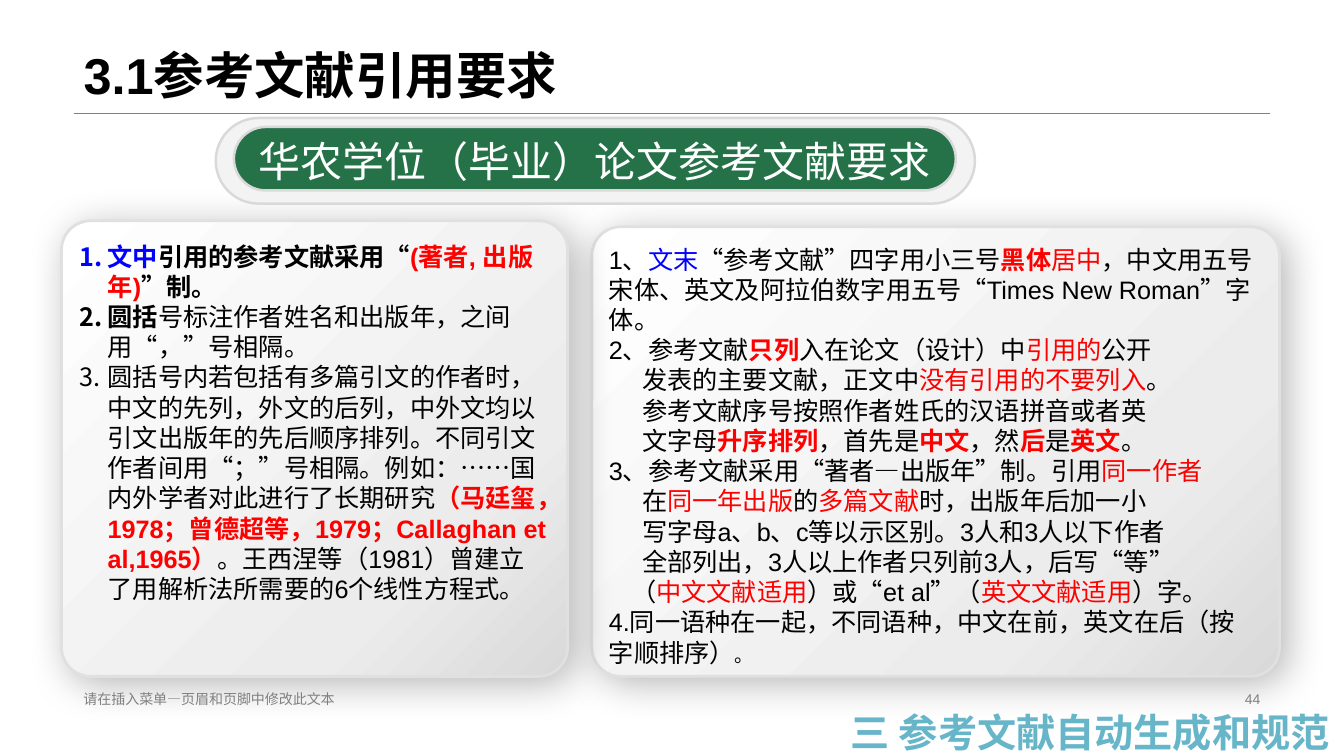
"""Build the slide on citation requirements for theses."""
from copy import deepcopy

from lxml import etree
from pptx import Presentation
from pptx import util as u
from pptx.dml.color import RGBColor
from pptx.enum import shapes, text
from pptx.oxml import parse_xml
from pptx.oxml.ns import nsdecls, qn

PX = 9144
BLACK = RGBColor(0x00, 0x00, 0x00)
WHITE = RGBColor(0xFF, 0xFF, 0xFF)
RED = RGBColor(0xFF, 0x00, 0x00)
BLUE = RGBColor(0x00, 0x00, 0xFF)
GREY = RGBColor(0x80, 0x80, 0x80)
EDGE = RGBColor(0xE0, 0xE0, 0xE0)
MIST = RGBColor(0xEC, 0xEC, 0xEC)
SILVER = RGBColor(0xD9, 0xD9, 0xD9)
PALE = RGBColor(0xF3, 0xF3, 0xF3)
GREEN = RGBColor(0x25, 0x72, 0x49)
TEAL = RGBColor(0x66, 0xB5, 0xC9)
LEFT, CENTER, RIGHT = text.PP_ALIGN.LEFT, text.PP_ALIGN.CENTER, text.PP_ALIGN.RIGHT
TOP, MIDDLE = text.MSO_ANCHOR.TOP, text.MSO_ANCHOR.MIDDLE

SHADOW = (f'<a:effectLst {nsdecls("a")}><a:outerShdw blurRad="355600" dist="88900" '
          'dir="2700000" algn="tl" rotWithShape="0"><a:srgbClr val="000000">'
          '<a:alpha val="28000"/></a:srgbClr></a:outerShdw></a:effectLst>')


def add_span(para, words, color=BLACK, bold=False, size=18, latin="Arial"):
    """Add one run with its Latin and East Asian fonts."""
    span = para.add_run()
    span.text = words
    formats = {"name": latin, "size": u.Pt(size), "bold": bold}
    for name, value in formats.items():
        setattr(span.font, name, value)
    span.font.color.rgb = color
    etree.SubElement(span.font._element, qn("a:ea"), typeface="Noto Sans CJK SC")


def add_pill(left, top, width, height, rounding, edge, weight):
    """Add a rounded rectangle with an outline and no shadow."""
    shape = page.shapes.add_shape(shapes.MSO_SHAPE.ROUNDED_RECTANGLE,
                                  *(n * PX for n in (left, top, width, height)))
    shape.adjustments[0] = rounding
    shape.shadow.inherit = False
    shape.line.color.rgb = edge
    shape.line.width = u.Pt(weight)
    return shape


deck = Presentation()
deck.slide_width, deck.slide_height = 1333 * PX, 750 * PX
page = deck.slides.add_slide(deck.slide_layouts[5])

title = page.shapes.title
for name, value in {"left": 73, "top": 40, "width": 1187, "height": 76}.items():
    setattr(title, name, value * PX)
title.text_frame.vertical_anchor = TOP
heading = title.text_frame.paragraphs[0]
heading.alignment = LEFT
heading.line_spacing = u.Pt(42)
add_span(heading, "3.1", bold=True, size=36)
add_span(heading, "参考文献引用要求", bold=True, size=36, latin="Noto Sans CJK SC")

rule = page.shapes.add_connector(shapes.MSO_CONNECTOR.STRAIGHT,
                                 73 * PX, 112 * PX, 1260 * PX, 112 * PX)
rule.line.color.rgb = GREY
rule.line.width = u.Pt(0.25)
etree.SubElement(rule._element.spPr, qn("a:effectLst"))

for place in ((587, 225, 682, 446), (61, 219, 502, 452)):
    panel = add_pill(*place, 0.064, EDGE, 2)
    panel.fill.gradient()
    panel.fill.gradient_angle = 315
    stop_list = panel._element.spPr.find(qn("a:gradFill")).find(qn("a:gsLst"))
    stop_list.append(deepcopy(stop_list[-1]))
    for stop, (position, color) in zip(panel.fill.gradient_stops,
                                       ((0, WHITE), (0.73, MIST), (1, SILVER))):
        stop.position = position
        stop.color.rgb = color
    effects = panel._element.spPr.find(qn("a:effectLst"))
    panel._element.spPr.replace(effects, parse_xml(SHADOW))

for place, color in (((214, 117, 753, 85), PALE), ((232, 126, 716, 63), GREEN)):
    pill = add_pill(*place, 0.5, SILVER, 1.75)
    pill.fill.solid()
    pill.fill.fore_color.rgb = color

labels = [
    ("请在插入菜单—页眉和页脚中修改此文本", (73, 682, 453, 23), GREY, 10, False, LEFT, MIDDLE, None),
    ("44", (942, 682, 318, 23), GREY, 10, False, RIGHT, MIDDLE, None),
    ("华农学位（毕业）论文参考文献要求", (232, 125, 716, 111), WHITE, 30, False, CENTER, TOP, 39),
    ("三 参考文献自动生成和规范", (834, 694, 509, 57), TEAL, 28, True, LEFT, TOP, 36),
]
for words, place, color, size, bold, align, anchor, spacing in labels:
    box = page.shapes.add_textbox(*(n * PX for n in place))
    box.text_frame.word_wrap = color != TEAL
    box.text_frame.vertical_anchor = anchor
    para = box.text_frame.paragraphs[0]
    para.alignment = align
    if spacing:
        para.line_spacing = u.Pt(spacing)
    add_span(para, words, color, bold, size)

in_text_rules = [
    (28, [("文中", BLUE, True), ("引用的参考文献采用“", BLACK, True),
          ("(著者, 出版年)", RED, True), ("”制。", BLACK, True)]),
    (28, [("圆括", BLACK, True), ("号标注作者姓名和出版年，之间用“，”号相隔。",)]),
    (28, [("圆括号内若包括有多篇引文的作者时，中文的先列，外文的后列，中外文均以引文出版年的"
           "先后顺序排列。不同引文作者间用“；”号相隔。例如：……国内外学者对此进行了长期研究",),
          ("（马廷玺，1978；曾德超等，1979；Callaghan et al,1965）", RED, True),
          ("。王西涅等（1981）曾建立了用解析法所需要的6个线性方程式。",)]),
]
end_list_rules = [
    (0, [("1、",), ("文末", BLUE), ("“参考文献”四字用小三号",), ("黑体", RED, True),
         ("居中", RED), ("，中文用五号宋体、英文及阿拉伯数字用五号“Times New Roman”字体。",)]),
    (0, [("2、参考文献",), ("只列", RED, True), ("入在论文（设计）中",),
         ("引用的", RED), ("公开",)]),
    (33, [("发表的主要文献，正文中",), ("没有引用的不要列入", RED), ("。",)]),
    (33, [("参考文献序号按照作者姓氏的汉语拼音或者英",)]),
    (33, [("文字母",), ("升序排列", RED, True), ("，首先是",), ("中文", RED, True),
          ("，然",), ("后", RED, True), ("是",), ("英文", RED, True), ("。",)]),
    (0, [("3、参考文献采用“著者—出版年”制。引用",), ("同一作者", RED)]),
    (33, [("在",), ("同一年出版", RED), ("的",), ("多篇文献", RED), ("时，出版年后加一小",)]),
    (33, [("写字母a、b、c等以示区别。3人和3人以下作者",)]),
    (33, [("全部列出，3人以上作者只列前3人，后写“等”",)]),
    (22, [("（",), ("中文文献适用", RED), ("）或“et al”（",), ("英文文献适用", RED), ("）字。",)]),
    (0, [("4.同一语种在一起，不同语种，中文在前，英文在后（按字顺排序）",),
         ("。", BLACK, False, 13.5)]),
]
for place, rules, numbered in (((69, 234, 486, 374), in_text_rules, True),
                               ((594, 237, 665, 404), end_list_rules, False)):
    box = page.shapes.add_textbox(*(n * PX for n in place))
    box.text_frame.word_wrap = True
    for index, (indent, spans) in enumerate(rules):
        para = box.text_frame.add_paragraph() if index else box.text_frame.paragraphs[0]
        para.line_spacing = u.Pt(21.6)
        layout = para._element.get_or_add_pPr()
        layout.set("marL", str(indent * PX))
        if numbered:
            layout.set("indent", str(-indent * PX))
            etree.SubElement(layout, qn("a:buFont"), typeface="Arial")
            etree.SubElement(layout, qn("a:buAutoNum"), type="arabicPeriod")
        for span in spans:
            add_span(para, *span)

deck.save("out.pptx")
